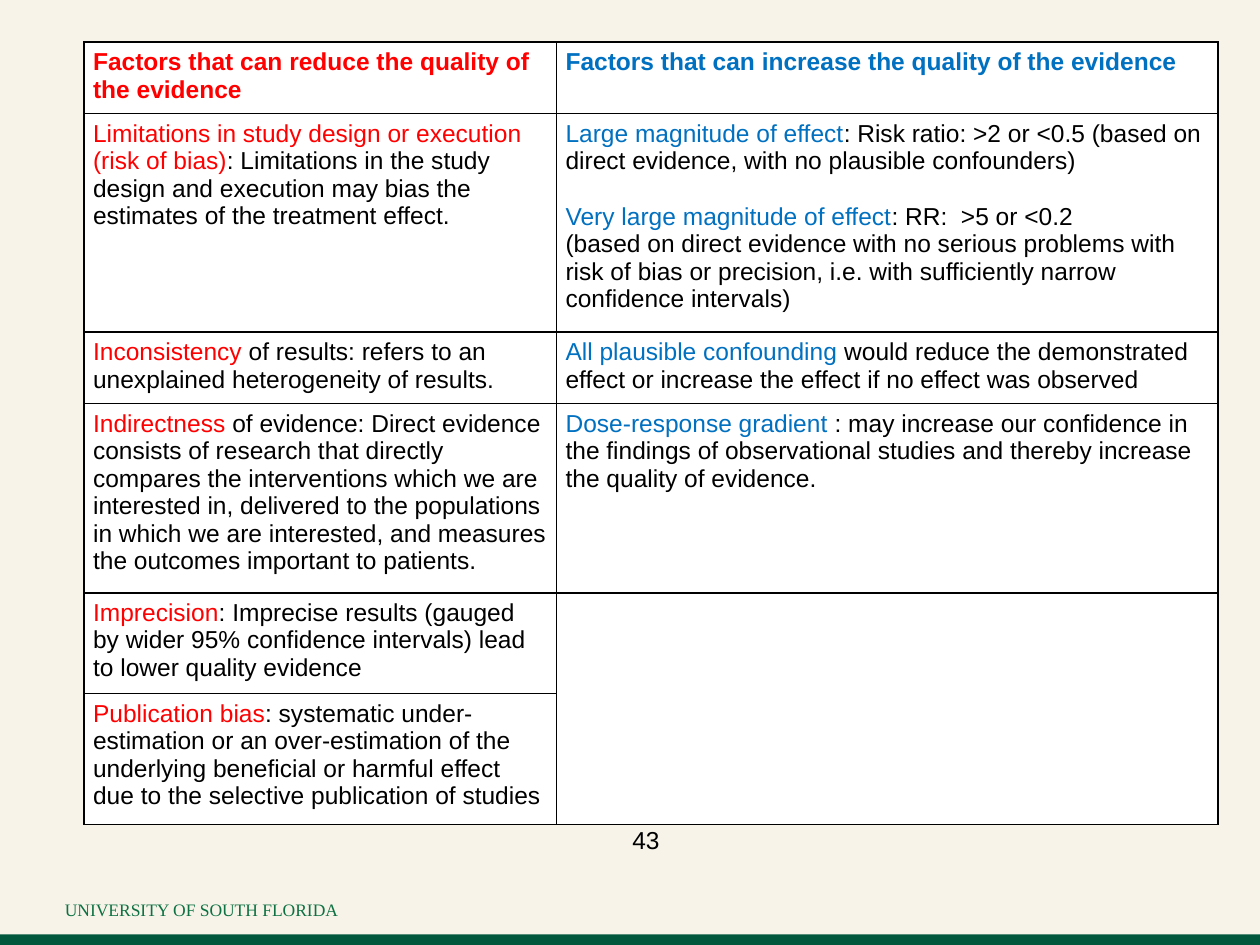
import pptx
import pptx.util
import pptx.dml.color
import pptx.enum.shapes
import pptx.enum.text
import pptx.oxml.ns
import lxml.etree

Pt = pptx.util.Pt
COLORS = {
    "background": "F7F3E9", "band": "00573C", "footer": "0D7144",
    "reduce": "FF0000", "increase": "0070C0", "text": "000000", "cell": "FFFFFF",
}
COLUMN_WIDTHS = [270, 378]
COLUMN_COLORS = ["reduce", "increase"]
ROW_HEIGHTS = [40.6, 125, 40.6, 108, 57.6, 74.6]

HEADERS = [
    "Factors that can reduce the quality of the evidence",
    "Factors that can increase the quality of the evidence",
]
REDUCING = [
    [("Limitations in study design or execution (risk of bias)",
      ": Limitations in the study design and execution may bias the estimates of the treatment effect.")],
    [("Inconsistency", " of results: refers to an unexplained heterogeneity of results.")],
    [("Indirectness",
      " of evidence: Direct evidence consists of research that directly compares the interventions "
      "which we are interested in, delivered to the populations in which we are interested, and "
      "measures the outcomes important to patients.")],
    [("Imprecision",
      ": Imprecise results (gauged by wider 95% confidence intervals) lead to lower quality evidence")],
    [("Publication bias",
      ": systematic under-estimation or an over-estimation of the underlying beneficial or harmful "
      "effect due to the selective publication of studies")],
]
INCREASING = [
    [("Large magnitude of effect",
      ": Risk ratio: >2 or <0.5 (based on direct evidence, with no plausible confounders)"),
     ("Very large magnitude of effect", ": RR:  >5 or <0.2"),
     ("", "(based on direct evidence with no serious problems with risk of bias or precision, "
          "i.e. with sufficiently narrow confidence intervals)")],
    [("All plausible confounding ",
      "would reduce the demonstrated effect or increase the effect if no effect was observed")],
    [("Dose-response gradient ",
      ": may increase our confidence in the findings of observational studies and thereby "
      "increase the quality of evidence.")],
]


def rgb(name):
    return pptx.dml.color.RGBColor.from_string(COLORS[name])


class SlideBuilder:
    font = "Arial"
    size = 14
    paragraph_gap = 16

    def __init__(self, page):
        self.page = page
        page.background.fill.solid()
        page.background.fill.fore_color.rgb = rgb("background")

    def style(self, span, color, bold=False, size=None, font=None):
        span.font.name = font or self.font
        span.font.size = Pt(size or self.size)
        span.font.bold = bold
        span.font.color.rgb = rgb(color)

    def band(self, left, top, width, height):
        box = self.page.shapes.add_shape(
            pptx.enum.shapes.MSO_SHAPE.RECTANGLE, Pt(left), Pt(top), Pt(width), Pt(height))
        box.shadow.inherit = False
        box.fill.solid()
        box.fill.fore_color.rgb = rgb("band")
        box.line.fill.background()

    def label(self, text, left, top, width, height, color, align, size=None, font=None):
        box = self.page.shapes.add_textbox(Pt(left), Pt(top), Pt(width), Pt(height))
        box.text_frame.word_wrap = True
        box.text_frame.text = text
        para = box.text_frame.paragraphs[0]
        para.alignment = align
        self.style(para.runs[0], color, size=size, font=font)

    def table(self, left, top, widths, heights):
        table = self.page.shapes.add_table(
            len(heights), len(widths), Pt(left), Pt(top), Pt(sum(widths)), Pt(sum(heights))).table
        table.first_row = False
        table.horz_banding = False
        for column, width in zip(table.columns, widths):
            column.width = Pt(width)
        for row, height in zip(table.rows, heights):
            row.height = Pt(height)
        for cell in table.iter_cells():
            self.format_cell(cell)
        return table

    def format_cell(self, cell):
        cell.margin_left = cell.margin_right = Pt(5.2)
        cell.margin_top = cell.margin_bottom = Pt(3.6)
        qn = pptx.oxml.ns.qn
        properties = cell._tc.get_or_add_tcPr()
        for side in ("a:lnL", "a:lnR", "a:lnT", "a:lnB"):
            border = lxml.etree.SubElement(properties, qn(side), w=str(Pt(1)))
            fill = lxml.etree.SubElement(border, qn("a:solidFill"))
            lxml.etree.SubElement(fill, qn("a:srgbClr"), val=COLORS["text"])
        cell.fill.solid()
        cell.fill.fore_color.rgb = rgb("cell")

    def header(self, cell, text, color):
        cell.text_frame.text = text
        self.style(cell.text_frame.paragraphs[0].runs[0], color, bold=True)

    def factor(self, cell, entries, color):
        for index, (term, explanation) in enumerate(entries):
            para = cell.text_frame.paragraphs[0] if index == 0 else cell.text_frame.add_paragraph()
            if index and term:
                para.space_before = Pt(self.paragraph_gap)
            for text, text_color in ((term, color), (explanation, "text")):
                if text:
                    span = para.add_run()
                    span.text = text
                    self.style(span, text_color)


def main():
    deck = pptx.Presentation()
    deck.slide_width, deck.slide_height = Pt(720), Pt(540)
    builder = SlideBuilder(deck.slides.add_slide(deck.slide_layouts[6]))
    align = pptx.enum.text.PP_ALIGN

    builder.band(0, 534, 720, 6)
    builder.label("UNIVERSITY OF SOUTH FLORIDA", 30, 510, 228, 19.4, "footer", align.LEFT,
                  size=10, font="Times New Roman")
    builder.label("43", 216, 468, 168, 37.4, "text", align.RIGHT)

    table = builder.table(48, 24, COLUMN_WIDTHS, ROW_HEIGHTS)
    table.cell(4, 1).merge(table.cell(5, 1))
    for column, factors in enumerate((REDUCING, INCREASING)):
        color = COLUMN_COLORS[column]
        builder.header(table.cell(0, column), HEADERS[column], color)
        for row, entries in enumerate(factors, start=1):
            builder.factor(table.cell(row, column), entries, color)

    deck.save("out.pptx")


if __name__ == "__main__":
    main()
